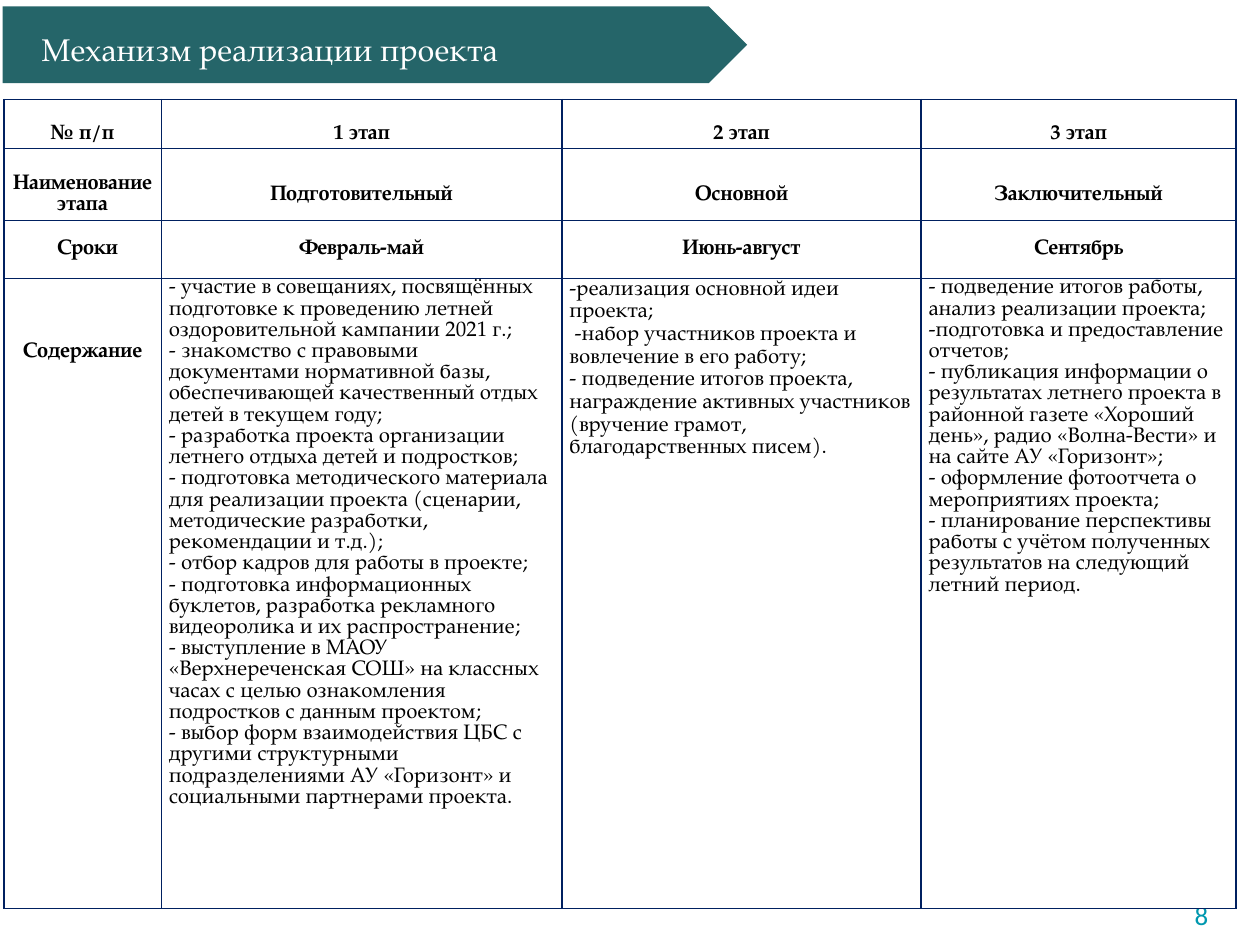
from lxml.etree import SubElement
from pptx import Presentation
from pptx.dml.color import RGBColor
from pptx.enum.shapes import MSO_SHAPE
from pptx.enum.text import MSO_ANCHOR, MSO_AUTO_SIZE, PP_ALIGN
from pptx.oxml.ns import qn
from pptx.util import Inches, Pt

COLORS = {"banner": "256569", "border": "002060", "text": "000000",
          "white": "FFFFFF", "number": "0098AF"}
SERIF, SANS = "TeX Gyre Pagella", "Calibri"
LINE = 0.17  # height of one line of table text, in inches

COL_WIDTHS = [1.25, 3.18, 2.85, 2.5]
ROW_HEIGHTS = [0.39, 0.56, 0.46, 4.21]
TOP_MARGINS = [LINE, LINE, 0, 0]
STAGES = [
    ["№ п/п", "1 этап", "2 этап", "3 этап"],
    ["Наименование этапа", "Подготовительный", "Основной", "Заключительный"],
    ["Сроки", "Февраль-май", "Июнь-август", "Сентябрь"],
    ["Содержание",
     "- участие в совещаниях, посвящённых подготовке к проведению летней "
     "оздоровительной кампании 2021 г.;\n"
     "- знакомство с правовыми документами нормативной базы, обеспечивающей "
     "качественный отдых детей в текущем году;\n"
     "- разработка проекта организации летнего отдыха детей и подростков;\n"
     "- подготовка методического материала для реализации проекта (сценарии, "
     "методические разработки, рекомендации и т.д.);\n"
     "- отбор кадров для работы в проекте;\n"
     "- подготовка информационных буклетов, разработка рекламного видеоролика "
     "и их распространение;\n"
     "- выступление в МАОУ «Верхнереченская СОШ» на классных часах с целью "
     "ознакомления подростков с данным проектом;\n"
     "- выбор форм взаимодействия ЦБС с другими структурными подразделениями "
     "АУ «Горизонт» и социальными партнерами проекта.",
     "-реализация основной идеи проекта;\n"
     " -набор участников проекта и\n"
     "вовлечение в его работу;\n"
     "- подведение итогов проекта, награждение активных участников "
     "(вручение грамот, благодарственных писем).",
     "- подведение итогов работы, анализ реализации проекта;\n"
     "-подготовка и предоставление отчетов;\n"
     "- публикация информации о результатах летнего проекта в районной газете "
     "«Хороший день», радио «Волна-Вести» и на сайте АУ «Горизонт»;\n"
     "- оформление фотоотчета о мероприятиях проекта;\n"
     "- планирование перспективы работы с учётом полученных результатов "
     "на следующий летний период."],
]


class SlideBuilder:
    def __init__(self, prs):
        self.s = prs.slides.add_slide(prs.slide_layouts[5])

    def color(self, name):
        return RGBColor.from_string(COLORS[name])

    def format_text(self, tf, size, color, font=SERIF, bold=False,
                    align=PP_ALIGN.LEFT, spacing=None):
        for p in tf.paragraphs:
            p.alignment = align
            p.line_spacing = spacing
            for r in p.runs:
                r.font.name, r.font.size, r.font.bold = font, Pt(size), bold
                r.font.color.rgb = self.color(color)

    def banner(self, x, y, w, h):
        sp = self.s.shapes.add_shape(MSO_SHAPE.PENTAGON, Inches(x), Inches(y),
                                     Inches(w), Inches(h))
        sp.shadow.inherit = False
        sp.fill.solid()
        sp.fill.fore_color.rgb = self.color("banner")
        sp.line.fill.background()

    def title(self, text, x, y, w, h):
        sp = self.s.shapes.title
        sp.left, sp.top, sp.width, sp.height = map(Inches, (x, y, w, h))
        tf = sp.text_frame
        tf.text = text
        tf.word_wrap = True
        tf.auto_size = MSO_AUTO_SIZE.NONE
        tf.vertical_anchor = MSO_ANCHOR.BOTTOM
        tf.margin_left = tf.margin_right = Inches(0.11)
        tf.margin_top = tf.margin_bottom = Inches(0.06)
        self.format_text(tf, 18, "white", spacing=0.85)
        # The placeholder comes first in the tree; bring it above the banner.
        self.s.shapes._spTree.append(sp._element)

    def number(self, text, x, y, w, h):
        sp = self.s.shapes.add_textbox(Inches(x), Inches(y), Inches(w), Inches(h))
        tf = sp.text_frame
        tf.text = text
        tf.word_wrap = True
        tf.margin_left = tf.margin_right = Inches(0.09)
        tf.margin_top = tf.margin_bottom = Inches(0.04)
        self.format_text(tf, 15.4, "number", SANS)

    def borders(self, cell):
        pr = cell._tc.get_or_add_tcPr()
        for i, side in enumerate(("lnL", "lnR", "lnT", "lnB")):
            ln = pr.makeelement(qn(f"a:{side}"), {"w": str(Pt(1))})
            fill = SubElement(ln, qn("a:solidFill"))
            SubElement(fill, qn("a:srgbClr"), val=COLORS["border"])
            pr.insert(i, ln)

    def cell(self, cell, text, heading, top=0):
        cell.fill.solid()
        cell.fill.fore_color.rgb = self.color("white")
        cell.margin_left = cell.margin_right = Inches(0.06)
        cell.margin_top, cell.margin_bottom = Inches(top), 0
        cell.vertical_anchor = MSO_ANCHOR.MIDDLE if heading else MSO_ANCHOR.TOP
        cell.text_frame.text = text
        self.format_text(cell.text_frame, 12, "text", bold=heading,
                         align=PP_ALIGN.CENTER if heading else PP_ALIGN.LEFT)
        self.borders(cell)

    def stage_table(self, x, y):
        frame = self.s.shapes.add_table(
            len(STAGES), len(COL_WIDTHS), Inches(x), Inches(y),
            Inches(sum(COL_WIDTHS)), Inches(sum(ROW_HEIGHTS)))
        table = frame.table
        for col, width in zip(table.columns, COL_WIDTHS):
            col.width = Inches(width)
        for row, height in zip(table.rows, ROW_HEIGHTS):
            row.height = Inches(height)
        last = len(STAGES) - 1
        for i, texts in enumerate(STAGES):
            for j, text in enumerate(texts):
                self.cell(table.cell(i, j), text, i < last or j == 0, TOP_MARGINS[i])
        table.cell(2, 0).margin_left = Inches(0.14)
        content_label = table.cell(last, 0)
        content_label.vertical_anchor = MSO_ANCHOR.TOP
        content_label.margin_top = Inches(3 * LINE)
        self.format_text(table.cell(last, 2).text_frame, 12, "text", spacing=1.07)


def main():
    prs = Presentation()
    prs.slide_width, prs.slide_height = Inches(10), Inches(7.5)
    slide = SlideBuilder(prs)
    slide.number("8", 9.39, 7.09, 0.45, 0.27)
    slide.stage_table(0.03, 0.79)
    slide.banner(0.02, 0.05, 5.91, 0.61)
    slide.title("Механизм реализации проекта", 0.22, 0.05, 5.2, 0.55)
    prs.save("out.pptx")


if __name__ == "__main__":
    main()
